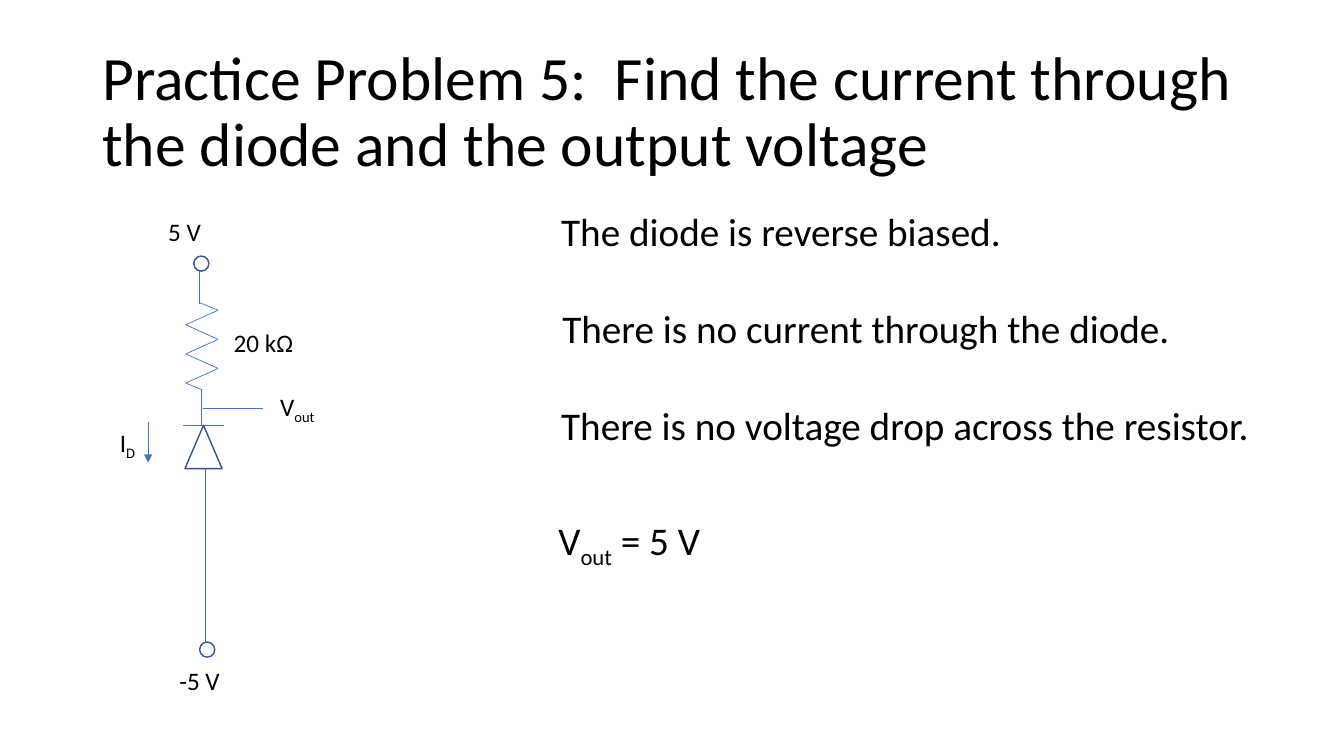
from dataclasses import dataclass
from itertools import pairwise

from lxml import etree
from pptx import Presentation
from pptx.dml import color as dml
from pptx.enum import shapes, text
from pptx.oxml import ns
from pptx.util import Pt

COLORS = {"ink": "000000", "wire": "4472C4", "outline": "325491", "paper": "FFFFFF"}
FONT = "Calibri"
SUBSCRIPT = "-25000"

Point = tuple[float, float]


@dataclass
class Label:
    left: float
    top: float
    width: float
    height: float
    runs: list[tuple[str, bool]]  # wording, subscript
    size: float = 18
    line_spacing: float = 1.0
    space_before: float = 0
    anchor: text.MSO_ANCHOR = text.MSO_ANCHOR.TOP


@dataclass
class Wire:
    start: Point
    end: Point
    arrow: bool = False


@dataclass
class Symbol:
    kind: shapes.MSO_SHAPE
    left: float
    top: float
    width: float
    height: float
    fill: str | None = None


def rgb(name: str) -> dml.RGBColor:
    return dml.RGBColor.from_string(COLORS[name])


def draw_label(slide, label: Label) -> None:
    box = slide.shapes.add_textbox(
        Pt(label.left), Pt(label.top), Pt(label.width), Pt(label.height))
    frame = box.text_frame
    frame.word_wrap = True
    frame.vertical_anchor = label.anchor
    paragraph = frame.paragraphs[0]
    paragraph.line_spacing = label.line_spacing
    paragraph.space_before = Pt(label.space_before)
    for wording, subscript in label.runs:
        run = paragraph.add_run()
        run.text = wording
        run.font.name = FONT
        run.font.size = Pt(label.size)
        run.font.color.rgb = rgb("ink")
        if subscript:
            run._r.get_or_add_rPr().set("baseline", SUBSCRIPT)


def draw_wire(slide, wire: Wire) -> None:
    line = slide.shapes.add_connector(
        shapes.MSO_CONNECTOR.STRAIGHT, *map(Pt, wire.start + wire.end))
    line.line.color.rgb = rgb("wire")
    line.line.width = Pt(0.5)
    if wire.arrow:
        etree.SubElement(line.line._get_or_add_ln(), ns.qn("a:tailEnd"), type="triangle")
    etree.SubElement(line._element.spPr, ns.qn("a:effectLst"))


def draw_symbol(slide, symbol: Symbol) -> None:
    shape = slide.shapes.add_shape(
        symbol.kind, Pt(symbol.left), Pt(symbol.top), Pt(symbol.width), Pt(symbol.height))
    shape.shadow.inherit = False
    if symbol.fill:
        shape.fill.solid()
        shape.fill.fore_color.rgb = rgb(symbol.fill)
    else:
        shape.fill.background()
    shape.line.color.rgb = rgb("outline")
    shape.line.width = Pt(1)


def circuit_wires() -> list[Wire]:
    # Resistor: six corners swing between right and left at equal steps
    corners = [(155.8 if i % 2 == 0 else 132.7, 221.6 + 10.4 * i) for i in range(6)]
    resistor = [(142.8, 216.3), *corners, (144.6, 278.6)]
    return [
        Wire((146.4, 463.7), (146.4, 334.1)),            # diode to lower terminal
        Wire((144.7, 291.6), (187.9, 291.6)),            # output branch
        Wire((159.8, 303.8), (131, 303.8)),              # diode bar
        Wire((142.6, 217.4), (142.6, 190.8)),            # upper terminal to resistor
        Wire((144, 303.8), (144, 278.6)),                # resistor to diode
        Wire((105.8, 301.7), (105.8, 330.5), arrow=True),  # diode current
        *(Wire(start, end) for start, end in pairwise(resistor)),
    ]


def terminal(left: float, top: float) -> Symbol:
    return Symbol(shapes.MSO_SHAPE.OVAL, left, top, 10.8, 10.8, "paper")


def finding(left: float, top: float, width: float, height: float,
            runs: list[tuple[str, bool]]) -> Label:
    return Label(left, top, width, height, runs, 28, 0.9, 10)


SYMBOLS = [
    Symbol(shapes.MSO_SHAPE.ISOSCELES_TRIANGLE, 132.1, 303.8, 26.6, 31),
    terminal(138.4, 182.9),
    terminal(142.6, 458.6),
]

TITLE = Label(
    66, 28.8, 828, 104.4,
    [("Practice Problem 5:  Find the current through the diode and the output voltage", False)],
    44, 0.9, anchor=text.MSO_ANCHOR.MIDDLE)

CIRCUIT_LABELS = [
    Label(113, 151.2, 85, 29, [("5 V", False)]),
    Label(159.8, 230.4, 85, 29, [("20 kΩ", False)]),
    Label(193, 275.8, 77, 29, [("V", False), ("out", True)]),
    Label(78.5, 301.7, 51, 29, [("I", False), ("D", True)]),
    Label(121, 471.6, 85, 29, [("-5 V", False)]),
]

FINDINGS = [
    finding(393.8, 148.3, 344, 44, [("The diode is reverse biased.", False)]),
    finding(394.6, 217.4, 499, 57, [("There is no current through the diode.", False)]),
    finding(393.8, 286.6, 537, 57, [("There is no voltage drop across the resistor.", False)]),
    finding(391.7, 365.8, 351, 54, [("V", False), ("out", True), (" = 5 V", False)]),
]


def main() -> None:
    deck = Presentation()
    deck.slide_width, deck.slide_height = Pt(960), Pt(540)
    slide = deck.slides.add_slide(deck.slide_layouts[6])

    # Circuit
    for wire in circuit_wires():
        draw_wire(slide, wire)
    for symbol in SYMBOLS:
        draw_symbol(slide, symbol)

    # Title, circuit labels and findings
    for label in [TITLE, *CIRCUIT_LABELS, *FINDINGS]:
        draw_label(slide, label)

    deck.save("out.pptx")


if __name__ == "__main__":
    main()
